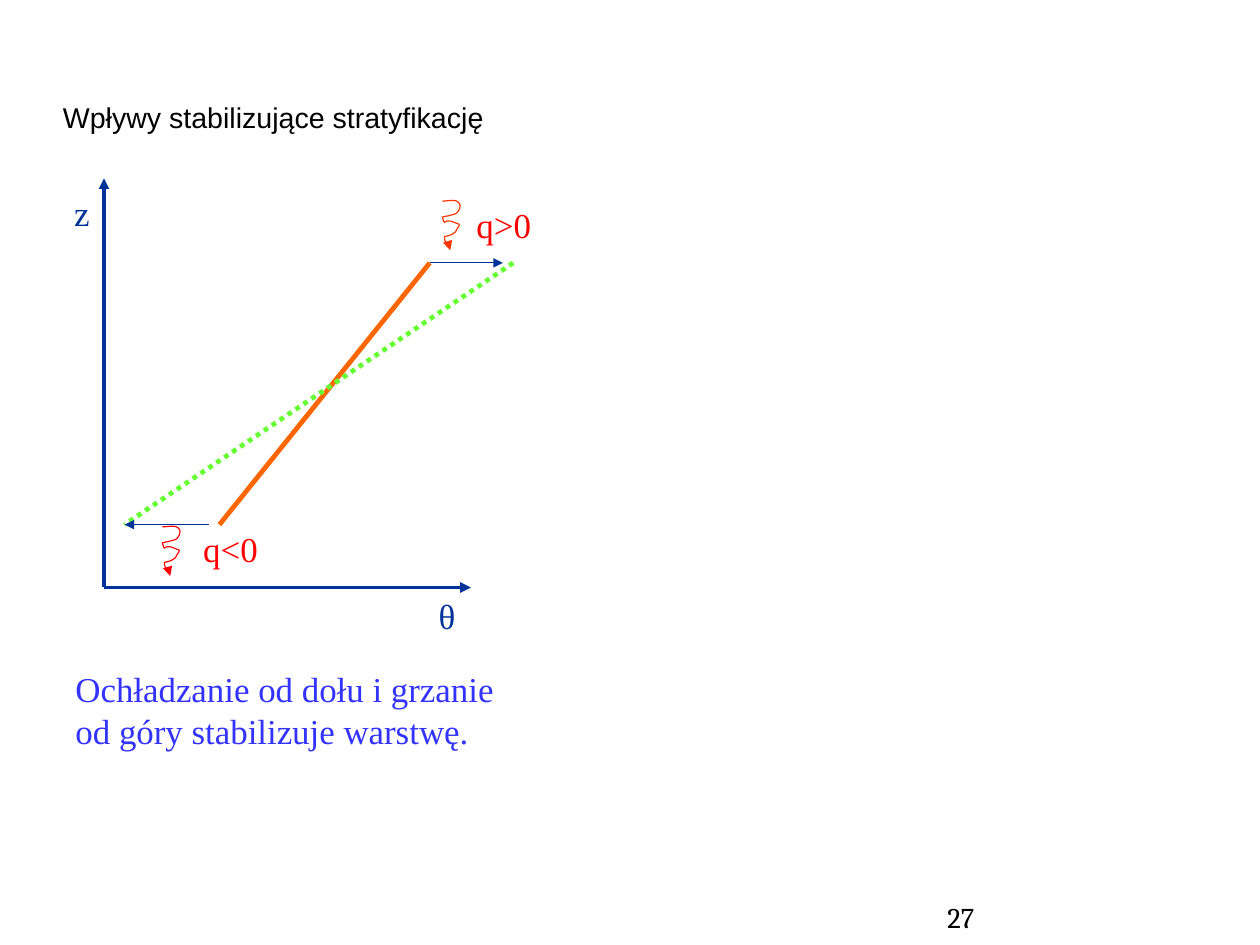
import pptx
import pptx.dml.color
import pptx.enum.dml
import pptx.enum.shapes
import pptx.enum.text
import pptx.oxml
import pptx.oxml.ns
import pptx.util

Inches = pptx.util.Inches
CM_PER_INCH = 2.54
NAVY, RED, ORANGE, GREEN = "003399", "FF0000", "FF6600", "66FF33"
SERIF = "Times New Roman"
FIXED = pptx.enum.text.MSO_AUTO_SIZE.NONE
GROW = pptx.enum.text.MSO_AUTO_SIZE.SHAPE_TO_FIT_TEXT

# Heat wave: start point, then cubic segments (two controls and an end point)
WAVE_START = (1.42, 4.61)
WAVE_CURVES = [
    ((1.47, 4.61), (1.53, 4.59), (1.56, 4.62)),
    ((1.59, 4.64), (1.57, 4.69), (1.55, 4.71)),
    ((1.53, 4.73), (1.49, 4.73), (1.47, 4.74)),
    ((1.45, 4.74), (1.42, 4.75), (1.42, 4.75)),
    ((1.46, 4.86), (1.40, 4.73), (1.56, 4.81)),
    ((1.58, 4.81), (1.56, 4.84), (1.55, 4.85)),
    ((1.54, 4.87), (1.54, 4.88), (1.52, 4.89)),
    ((1.50, 4.91), (1.44, 4.92), (1.44, 4.92)),
    ((1.44, 4.94), (1.44, 4.95), (1.45, 4.97)),
    ((1.46, 4.98), (1.49, 4.97), (1.49, 4.98)),
    ((1.50, 5.00), (1.49, 5.02), (1.49, 5.04)),
]
STEPS = 6


def rgb(value):
    return pptx.dml.color.RGBColor.from_string(value)


def apply_formats(target, formats):
    for name, value in formats.items():
        setattr(target, name, value)


def style_line(shape, color, width, arrow=False, dash=None):
    line = shape.line
    line.color.rgb = rgb(color)
    apply_formats(line, {"width": pptx.util.Pt(width), "dash_style": dash})
    if arrow:
        outline = line._get_or_add_ln()
        outline.append(pptx.oxml.parse_xml(
            f'<a:tailEnd {pptx.oxml.ns.nsdecls("a")} type="triangle"/>'))


def add_line(page, start, end, color, width, arrow=False, dash=None):
    line = page.shapes.add_connector(
        pptx.enum.shapes.MSO_CONNECTOR.STRAIGHT,
        *(Inches(value) for value in (*start, *end)))
    style_line(line, color, width, arrow, dash)
    line._element.spPr.append(pptx.oxml.parse_xml(
        f'<a:effectLst {pptx.oxml.ns.nsdecls("a")}/>'))


def bezier_point(points, t):
    weights = ((1 - t) ** 3, 3 * t * (1 - t) ** 2, 3 * t ** 2 * (1 - t), t ** 3)
    return tuple(sum(weight * point[axis] for weight, point in zip(weights, points))
                 for axis in (0, 1))


def add_wave(page, shift, color):
    points = [WAVE_START]
    for curve in WAVE_CURVES:
        controls = (points[-1], *curve)
        points += [bezier_point(controls, step / STEPS)
                   for step in range(1, STEPS + 1)]
    start, *rest = [(Inches(x + shift[0]), Inches(y + shift[1]))
                    for x, y in points]
    builder = page.shapes.build_freeform(*start)
    builder.add_line_segments(rest, close=False)
    wave = builder.convert_to_shape()
    wave.shadow.inherit = False
    wave.fill.background()
    style_line(wave, color, 0.75, arrow=True)


def add_text(page, area, text, size, font, color, insets=(0.1, 0.05),
             wrap=True, fit=FIXED, anchor=pptx.enum.text.MSO_ANCHOR.TOP):
    box = page.shapes.add_textbox(*(Inches(value) for value in area))
    across, down = (Inches(value) for value in insets)
    apply_formats(box.text_frame, {
        "word_wrap": wrap,
        "auto_size": fit,
        "vertical_anchor": anchor,
        "margin_left": across,
        "margin_right": across,
        "margin_top": down,
        "margin_bottom": down,
    })
    para = box.text_frame.paragraphs[0]
    span = para.add_run()
    span.text = text
    apply_formats(span.font, {"size": pptx.util.Pt(size), "name": font})
    span.font.color.rgb = rgb(color)


def main():
    # Page of 28 by 21 cm
    deck = pptx.Presentation()
    apply_formats(deck, {"slide_width": Inches(28 / CM_PER_INCH),
                         "slide_height": Inches(21 / CM_PER_INCH)})
    page = deck.slides.add_slide(deck.slide_layouts[6])

    # Page number and title
    add_text(page, (8.18, 7.81, 2.3, 0.28), "27", 18, "Cambria", "000000",
             insets=(0.11, 0.06))
    add_text(page, (0.55, 0.33, 9.92, 1.38), "Wpływy stabilizujące stratyfikację",
             18, "Arial", "000000", insets=(0, 0),
             anchor=pptx.enum.text.MSO_ANCHOR.MIDDLE)

    # Axes
    origin = (0.91, 5.14)
    for tip in ((0.91, 1.56), (4.12, 5.14)):
        add_line(page, origin, tip, NAVY, 2.25, arrow=True)

    # Profiles before and after, and the shifts at both ends
    top, bottom = 2.3, 4.59
    add_line(page, (1.92, bottom), (3.76, top), ORANGE, 3)
    add_line(page, (4.49, top), (1.09, bottom), GREEN, 3,
             dash=pptx.enum.dml.MSO_LINE.ROUND_DOT)
    for start, end, level in ((3.76, 4.4, top), (1.83, 1.09, bottom)):
        add_line(page, (start, level), (end, level), NAVY, 0.75, arrow=True)

    # Heat fluxes
    add_wave(page, (0, 0), RED)
    add_wave(page, (2.45, -2.85), "FF3300")

    # Diagram labels
    for text, area, color in (
        ("q<0", (1.68, 4.57, 0.7, 0.48), RED),
        ("q>0", (4.07, 1.73, 0.7, 0.48), RED),
        ("θ", (3.74, 5.15, 0.36, 0.47), NAVY),
        ("z", (0.55, 1.63, 0.34, 0.47), NAVY),
    ):
        add_text(page, area, text, 22, SERIF, color, wrap=False, fit=GROW)

    # Conclusion
    add_text(page, (0.55, 5.78, 4.09, 1.21),
             "Ochładzanie od dołu i grzanie od góry stabilizuje warstwę.",
             22, SERIF, "3333FF", insets=(0.11, 0.06), fit=GROW)

    deck.save("out.pptx")


if __name__ == "__main__":
    main()
